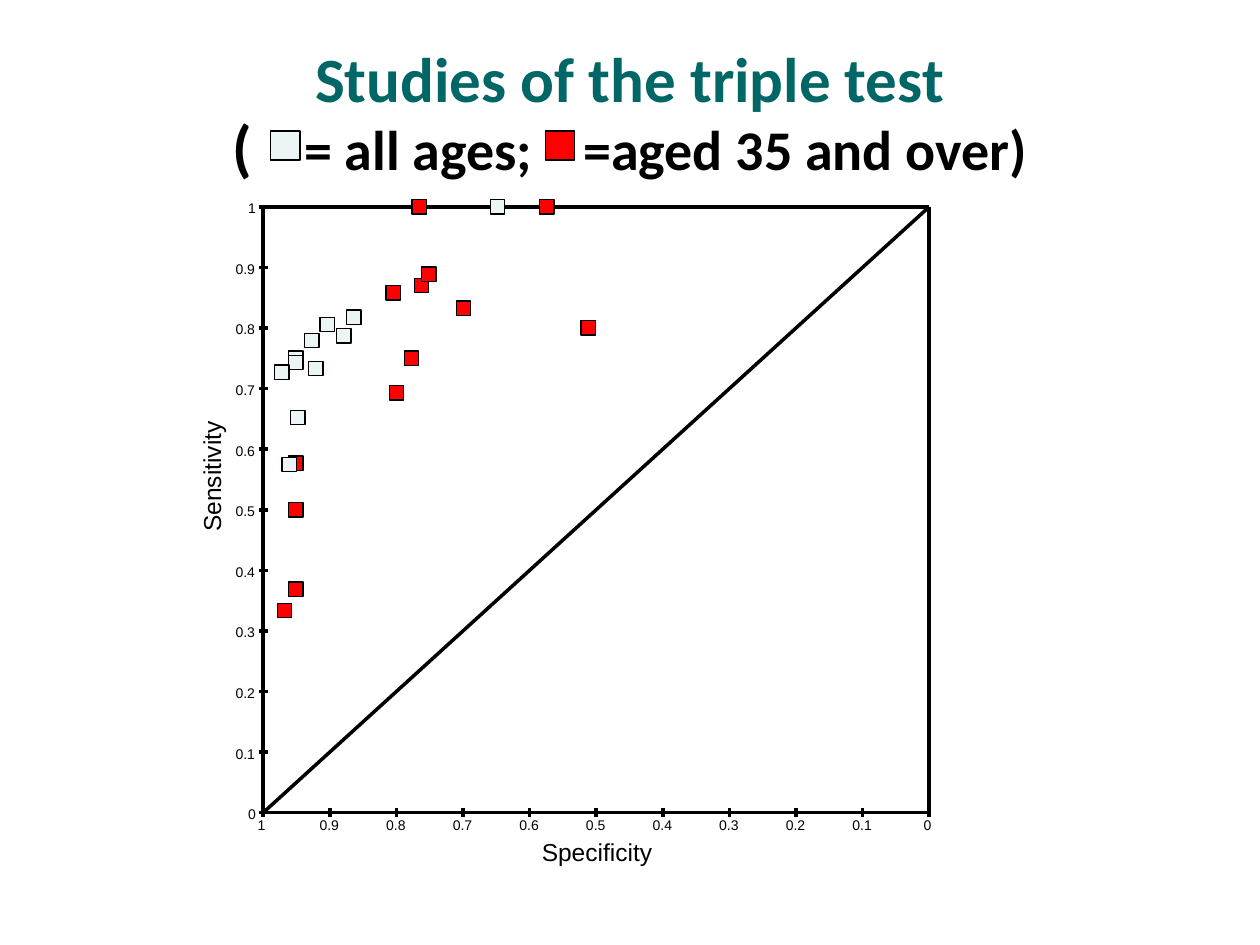
from lxml import etree
from pptx import Presentation
from pptx.dml.color import RGBColor
from pptx.enum.shapes import MSO_CONNECTOR, MSO_SHAPE
from pptx.enum.text import MSO_ANCHOR, MSO_AUTO_SIZE, PP_ALIGN
from pptx.oxml.ns import qn
from pptx.util import Pt

LINE = MSO_CONNECTOR.STRAIGHT
RECT = MSO_SHAPE.RECTANGLE
MIDDLE = MSO_ANCHOR.MIDDLE
GROW = MSO_AUTO_SIZE.SHAPE_TO_FIT_TEXT
CENTER = PP_ALIGN.CENTER

BLACK, RED, PALE, TEAL = "000000", "FF0000", "EBF5F5", "006666"

OLDER = [(80, 69.3), (76.2, 87), (80.5, 85.8), (57.4, 100), (76.6, 100),
         (95.1, 57.7), (77.7, 75), (69.9, 83.3), (75.1, 88.9),
         (51.2, 80), (95.1, 36.9), (95.1, 50), (96.8, 33.4)]
ALL = [(95.1, 75), (95.1, 74.3), (92.1, 73.3), (87.9, 78.7), (97.2, 72.7),
       (90.4, 80.6), (64.8, 100), (86.4, 81.8), (92.7, 77.9),
       (94.8, 65.2), (96.1, 57.5)]


def color(code):
    return RGBColor.from_string(code)


def style(item, **values):
    for name, value in values.items():
        setattr(item, name, value)


def line(slide, x1, y1, x2, y2):
    link = slide.shapes.add_connector(LINE, Pt(x1), Pt(y1), Pt(x2), Pt(y2))
    link.line.color.rgb = color(BLACK)
    link.line.width = Pt(0)
    etree.SubElement(link._element.spPr, qn("a:effectLst"))


def square(slide, x, y, size, fill):
    mark = slide.shapes.add_shape(RECT, Pt(x), Pt(y), Pt(size), Pt(size))
    mark.shadow.inherit = False
    mark.fill.solid()
    mark.fill.fore_color.rgb = color(fill)
    mark.line.color.rgb = color(BLACK)
    mark.line.width = Pt(0)


def write(para, text, size, face, code, bold=False, gap=0):
    run = para.add_run()
    run.text = text
    style(run.font, size=Pt(size), name=face, bold=bold)
    run.font.color.rgb = color(code)
    if gap:
        run._r.get_or_add_rPr().set("spc", str(gap))


def label(slide, box, text, size, wrap=False, turn=None):
    frame = slide.shapes.add_textbox(*map(Pt, box)).text_frame
    style(frame, margin_left=0, margin_right=0, margin_top=0,
          margin_bottom=0, word_wrap=wrap, auto_size=GROW)
    write(frame.paragraphs[0], text, size, "Arial", BLACK)
    if turn:
        frame._txBody.bodyPr.set("vert", turn)


def plot(slide, box):
    left, top, width, height = box
    right, base = left + width, top + height
    tick = 2.6

    line(slide, left, base, right, base)
    line(slide, left, top, left, base)
    for step in range(11):
        text = f"{step / 10:g}"
        wide = 15.8 if len(text) > 1 else 8.6
        x = right - width * step / 10
        y = base - height * step / 10
        line(slide, x, base - tick, x, base + tick)
        label(slide, (x - wide * 0.37, base + 2.2, wide, 10.8), text, 8)
        line(slide, left - tick, y, left + tick, y)
        label(slide, (left - wide, y - 4, wide, 10.8), text, 8)
    line(slide, left, top, right, top)
    line(slide, right, base, right, top)
    line(slide, left, base, right, top)

    size = 8.2
    for points, fill in ((OLDER, RED), (ALL, PALE)):
        for spec, sens in points:
            x = right - width * spec / 100
            y = base - height * sens / 100
            square(slide, x - size / 2, y - size / 2, size, fill)

    label(slide, (left - 38.1, top + 168.4, 63.4, 17.3),
          "Sensitivity", 14, turn="vert270")
    label(slide, (left + 159.2, base + 13.7, 67.7, 16.6),
          "Specificity", 14, wrap=True)


def heading(slide, box):
    left, top = box[:2]
    frame = slide.shapes.add_textbox(*map(Pt, box)).text_frame
    style(frame, word_wrap=True, vertical_anchor=MIDDLE)
    para = frame.paragraphs[0]
    style(para, alignment=CENTER, line_spacing=0.9)
    write(para, "Studies of the triple test", 36, "Calibri", TEAL, True)
    para.add_line_break()
    for text, size, gap in (("(", 36, 0), (" ", 32, 2260),
                            ("= all ages;", 32, 0), (" ", 32, 2170),
                            ("=aged 35 and over)", 32, 0)):
        write(para, text, size, "Calibri", BLACK, True, gap)
    for x, fill in ((118.8, PALE), (275.8, RED)):
        square(slide, left + x, top + 53.3, 16.6, fill)


def main():
    deck = Presentation()
    style(deck, slide_width=Pt(720), slide_height=Pt(540))
    slide = deck.slides.add_slide(deck.slide_layouts[6])
    plot(slide, (150.4, 118.2, 380.6, 346.2))
    heading(slide, (36, 21.6, 648, 90))
    deck.save("out.pptx")


if __name__ == "__main__":
    main()
